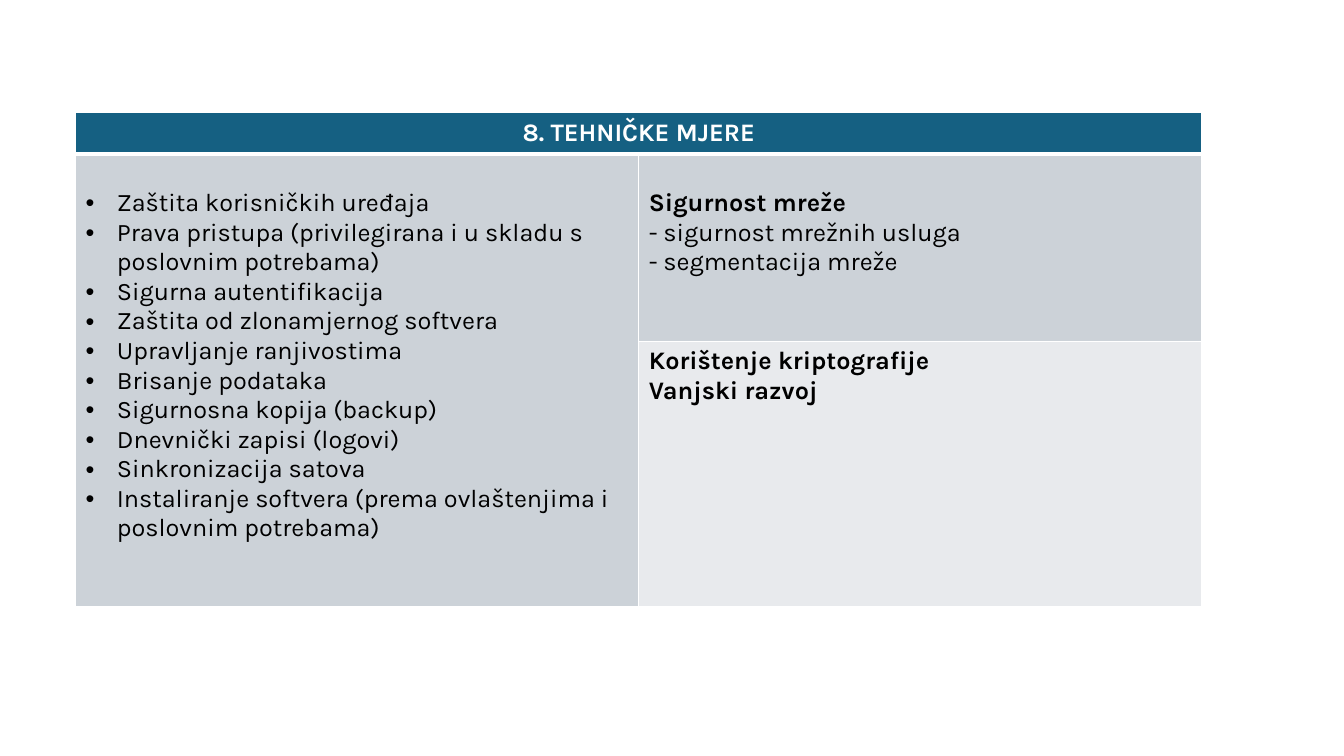
from dataclasses import dataclass

import pptx
import pptx.dml.color
import pptx.enum.text
import pptx.oxml
import pptx.oxml.ns
import pptx.table
import pptx.text.text
import pptx.util

Inches = pptx.util.Inches
Pt = pptx.util.Pt

FONT = "Karla"
COLORS = {
    "header": "156082",
    "band": "CCD2D8",
    "light": "E8EAED",
    "white": "FFFFFF",
    "text": "000000",
}
COLUMN_WIDTH = 5.585
ROW_HEIGHTS = (0.41, 1.86, 2.63)
BULLET_INDENT = 0.31


@dataclass
class Line:
    text: str
    bold: bool = False
    bullet: bool = False
    centered: bool = False
    color: str = "text"


@dataclass
class CellContent:
    row: int
    column: int
    fill: str
    lines: list[Line]
    top_margin: float = 0.05


MEASURES = (
    "Zaštita korisničkih uređaja",
    "Prava pristupa (privilegirana i u skladu s poslovnim potrebama)",
    "Sigurna autentifikacija",
    "Zaštita od zlonamjernog softvera",
    "Upravljanje ranjivostima",
    "Brisanje podataka",
    "Sigurnosna kopija (backup)",
    "Dnevnički zapisi (logovi)",
    "Sinkronizacija satova",
    "Instaliranje softvera (prema ovlaštenjima i poslovnim potrebama)",
)
CONTENTS = (
    CellContent(0, 0, "header", [
        Line("8. TEHNIČKE MJERE", bold=True, centered=True, color="white"),
    ]),
    CellContent(1, 0, "band", [Line(text, bullet=True) for text in MEASURES], 0.34),
    CellContent(1, 1, "band", [
        Line("Sigurnost mreže", bold=True),
        Line("- sigurnost mrežnih usluga"),
        Line("- segmentacija mreže"),
    ], 0.34),
    CellContent(2, 1, "light", [
        Line("Korištenje kriptografije", bold=True),
        Line("Vanjski razvoj", bold=True),
    ]),
)


def rgb(name: str) -> pptx.dml.color.RGBColor:
    return pptx.dml.color.RGBColor.from_string(COLORS[name])


def add_bullet(paragraph: pptx.text.text._Paragraph) -> None:
    properties = paragraph._p.get_or_add_pPr()
    indent = Inches(BULLET_INDENT)
    properties.set("marL", str(indent))
    properties.set("indent", str(-indent))
    namespace = pptx.oxml.ns.nsdecls("a")
    for tag in ('buFont typeface="Arial"', 'buChar char="•"'):
        properties.append(pptx.oxml.parse_xml(f"<a:{tag.replace(' ', f' {namespace} ', 1)}/>"))


def write_line(paragraph: pptx.text.text._Paragraph, line: Line) -> None:
    if line.bullet:
        add_bullet(paragraph)
    if line.centered:
        paragraph.alignment = pptx.enum.text.PP_ALIGN.CENTER
    run = paragraph.add_run()
    run.text = line.text
    run.font.name = FONT
    run.font.size = Pt(18)
    run.font.bold = line.bold
    run.font.color.rgb = rgb(line.color)


def set_borders(cell: pptx.table._Cell, widths: dict[str, float]) -> None:
    properties = cell._tc.get_or_add_tcPr()
    namespace = pptx.oxml.ns.nsdecls("a")
    for position, (side, width) in enumerate(widths.items()):
        border = pptx.oxml.parse_xml(
            f'<a:ln{side} {namespace} w="{Pt(width)}"><a:solidFill>'
            f'<a:srgbClr val="{COLORS["white"]}"/></a:solidFill></a:ln{side}>'
        )
        properties.insert(position, border)


def fill_cell(cell: pptx.table._Cell, content: CellContent) -> None:
    cell.fill.solid()
    cell.fill.fore_color.rgb = rgb(content.fill)
    cell.margin_top = Inches(content.top_margin)
    frame = cell.text_frame
    for index, line in enumerate(content.lines):
        write_line(frame.add_paragraph() if index else frame.paragraphs[0], line)


def main() -> None:
    presentation = pptx.Presentation()
    presentation.slide_width = Inches(13.33)
    presentation.slide_height = Inches(7.5)
    slide = presentation.slides.add_slide(presentation.slide_layouts[6])

    # Table grid
    table = slide.shapes.add_table(
        len(ROW_HEIGHTS), 2, Inches(0.75), Inches(1.12),
        Inches(2 * COLUMN_WIDTH), Inches(sum(ROW_HEIGHTS)),
    ).table
    table.first_row = False
    table.horz_banding = False
    for column in table.columns:
        column.width = Inches(COLUMN_WIDTH)
    for row, height in zip(table.rows, ROW_HEIGHTS):
        row.height = Inches(height)
    table.cell(0, 0).merge(table.cell(0, 1))
    table.cell(1, 0).merge(table.cell(2, 0))

    # Cell text and fills
    for content in CONTENTS:
        fill_cell(table.cell(content.row, content.column), content)

    # White rules, thicker around the header's lower edge
    for row_index, row in enumerate(table.rows):
        for cell in row.cells:
            top = 3 if row_index == 1 else 1
            bottom = 3 if row_index == 0 else 1
            set_borders(cell, {"L": 1, "R": 1, "T": top, "B": bottom})

    presentation.save("out.pptx")


if __name__ == "__main__":
    main()
